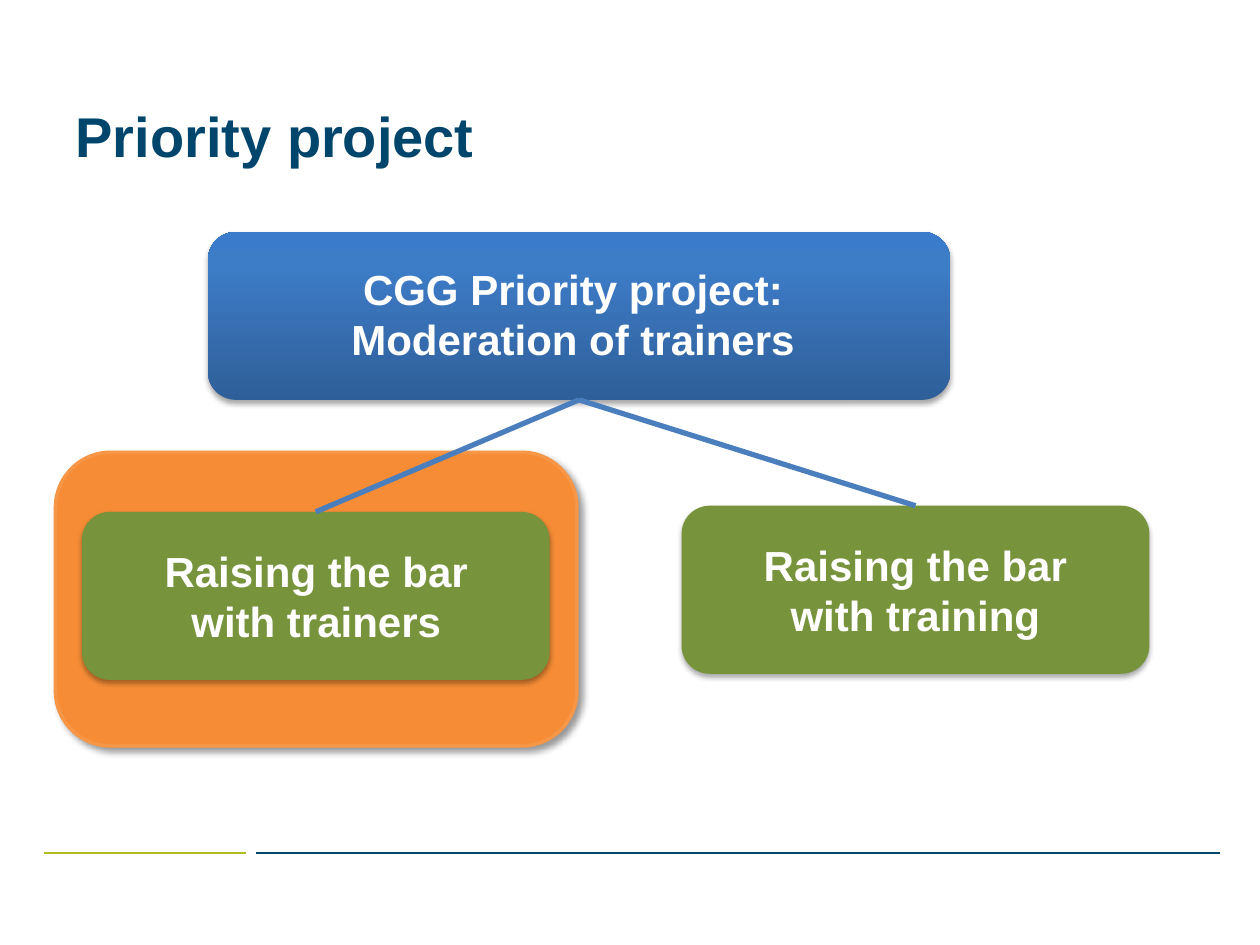
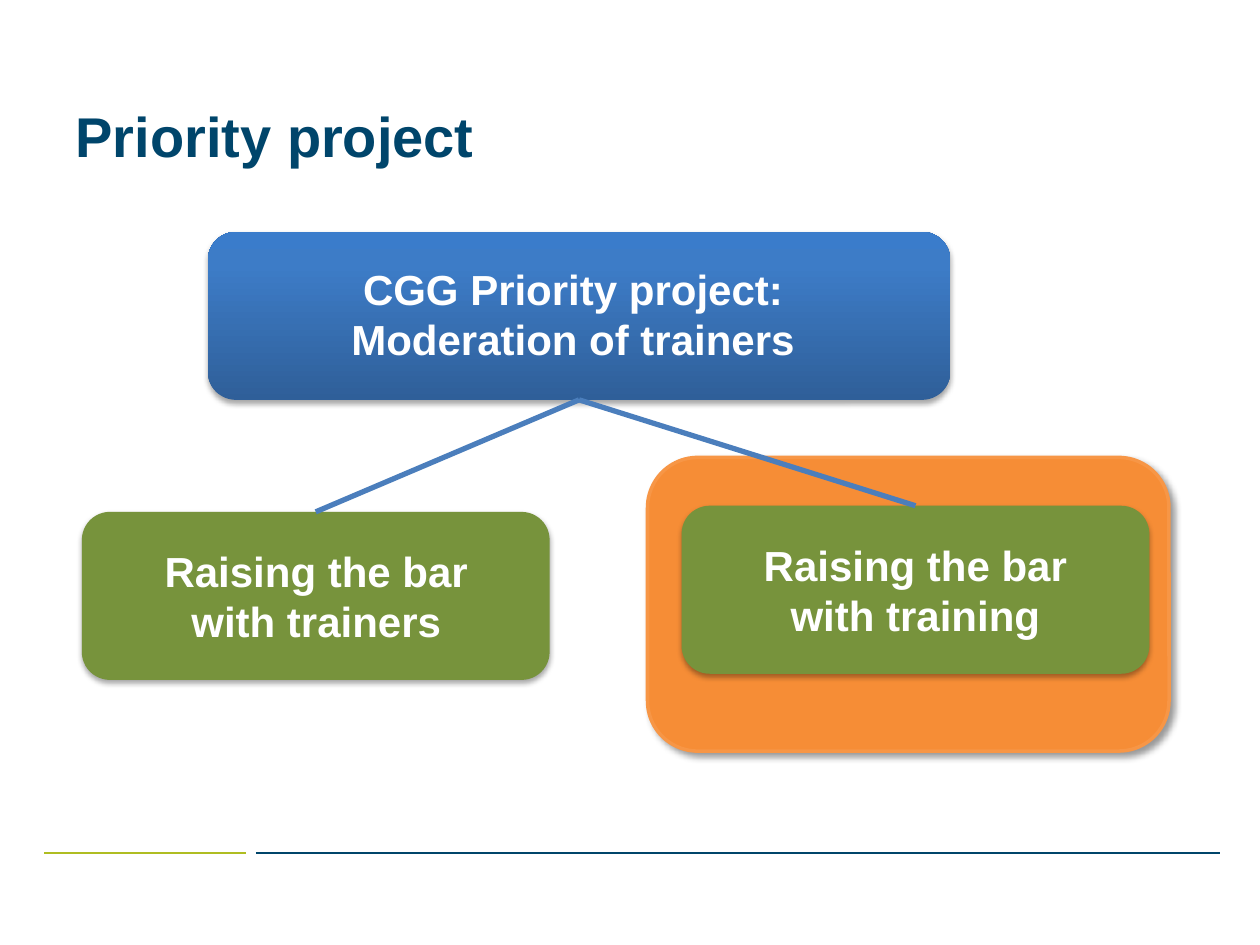
from pptx import Presentation
from pptx.dml.color import RGBColor
from pptx.enum import shapes, text
from pptx.oxml import parse_xml
from pptx.oxml.ns import nsdecls
from pptx.util import Pt

NAVY, WHITE = "00456B", "FFFFFF"
ORANGE, ORANGE_EDGE, GREEN = "F68D36", "F79646", "77933C"
LINK_BLUE = "4B7EBC"
BLUE_STOPS = [(0, "2F5F99"), (80, "3D7CC7"), (100, "3A7CCB")]
SOFT_SHADOW = (35, 3.1, 1.8, 90)
SIDE_SHADOW = (40, 4, 3, 45)

# Footer rules: left, right, colour
RULES = [(25.2, 140.4, "AFBD21"), (146.2, 697, "00456A")]
RULE_TOP = 487.4

# Boxes: left, top, width, height
PROJECT = (118.8, 132.5, 424.2, 96)
TRAINING = (389.5, 289, 267.3, 96)
TRAINERS = (46.8, 292.5, 267.3, 96)

# Labels: left, top, width, wording
LABELS = [
    (64.1, 308.2, 233.3, "Raising the bar with trainers"),
    (407.5, 304.6, 231.1, "Raising the bar with training"),
    (159.8, 146.9, 342, "CGG Priority project: \vModeration of trainers "),
]
LABEL_HEIGHT = 65.5

# One page per highlighted box: left, top, corner rounding
HIGHLIGHTS = [(31.7, 258.5, 0.188), (370, 261.4, 0.171)]
HIGHLIGHT_SIZE = (298, 167.8)


def rgb(value):
    return RGBColor.from_string(value)


def add_box(page, bounds, fill, shadow):
    """Add a rounded box; fill is a hex colour or a list of gradient stops,
    shadow is (opacity %, blur, distance, angle)."""
    box = page.shapes.add_shape(shapes.MSO_SHAPE.ROUNDED_RECTANGLE, *map(Pt, bounds))
    box.line.fill.background()
    properties = box.element.spPr
    if isinstance(fill, str):
        box.fill.solid()
        box.fill.fore_color.rgb = rgb(fill)
    else:
        stops = "".join(f'<a:gs pos="{place * 1000}"><a:srgbClr val="{color}"/></a:gs>'
                        for place, color in fill)
        properties.prstGeom.addnext(parse_xml(
            f'<a:gradFill {nsdecls("a")} rotWithShape="1"><a:gsLst>{stops}</a:gsLst>'
            '<a:lin ang="16200000" scaled="0"/></a:gradFill>'))
    opacity, blur, distance, angle = shadow
    properties.append(parse_xml(
        f'<a:effectLst {nsdecls("a")}><a:outerShdw blurRad="{Pt(blur)}" dist="{Pt(distance)}"'
        f' dir="{angle * 60000}" rotWithShape="0"><a:srgbClr val="000000">'
        f'<a:alpha val="{opacity * 1000}"/></a:srgbClr></a:outerShdw></a:effectLst>'))
    return box


deck = Presentation()
deck.slide_width, deck.slide_height = Pt(720), Pt(540)
layout = deck.slide_layouts.get_by_name("Title Only")
layout_title = layout.placeholders[0]
layout_title.left, layout_title.top = Pt(36), Pt(43.2)
layout_title.width, layout_title.height = Pt(648), Pt(68.4)

pages = [deck.slides.add_slide(layout) for _ in HIGHLIGHTS]

# The footer rules belong to the layout, which has no method for adding lines
for left, right, color in RULES:
    rule = pages[0].shapes.add_connector(
        shapes.MSO_CONNECTOR.STRAIGHT, Pt(left), Pt(RULE_TOP), Pt(right), Pt(RULE_TOP))
    rule.line.color.rgb = rgb(color)
    rule.line.width = Pt(0.75)
    rule.element.spPr.append(parse_xml(f'<a:effectLst {nsdecls("a")}/>'))
    layout.shapes.element.append(rule.element)

for page, (left, top, rounding) in zip(pages, HIGHLIGHTS):
    page.shapes.title.text = "Priority project"
    frame = page.shapes.title.text_frame
    frame.vertical_anchor = text.MSO_ANCHOR.MIDDLE
    para = frame.paragraphs[0]
    para.alignment = text.PP_ALIGN.LEFT
    para.font.name, para.font.size, para.font.bold = "Arial", Pt(32), True
    para.font.color.rgb = rgb(NAVY)

    highlight = add_box(page, (left, top, *HIGHLIGHT_SIZE), ORANGE, SIDE_SHADOW)
    highlight.adjustments[0] = rounding
    highlight.line.color.rgb = rgb(ORANGE_EDGE)
    highlight.line.width = Pt(2)

    training = add_box(page, TRAINING, GREEN, SOFT_SHADOW)
    trainers = add_box(page, TRAINERS, GREEN, SOFT_SHADOW)
    project = add_box(page, PROJECT, BLUE_STOPS, SOFT_SHADOW)

    for label_left, label_top, width, wording in LABELS:
        label = page.shapes.add_textbox(
            Pt(label_left), Pt(label_top), Pt(width), Pt(LABEL_HEIGHT))
        frame = label.text_frame
        frame.word_wrap = True
        frame.auto_size = text.MSO_AUTO_SIZE.SHAPE_TO_FIT_TEXT
        para = frame.paragraphs[0]
        para.text = wording
        para.alignment = text.PP_ALIGN.CENTER
        para.font.name, para.font.size, para.font.bold = "Arial", Pt(24), True
        para.font.color.rgb = rgb(WHITE)

    for target in (trainers, training):
        link = page.shapes.add_connector(shapes.MSO_CONNECTOR.STRAIGHT, 0, 0, 0, 0)
        link.begin_connect(project, 2)
        link.end_connect(target, 0)
        link.line.color.rgb = rgb(LINK_BLUE)
        link.line.width = Pt(3)
        link.element.spPr.append(parse_xml(f'<a:effectLst {nsdecls("a")}/>'))

deck.save("out.pptx")
